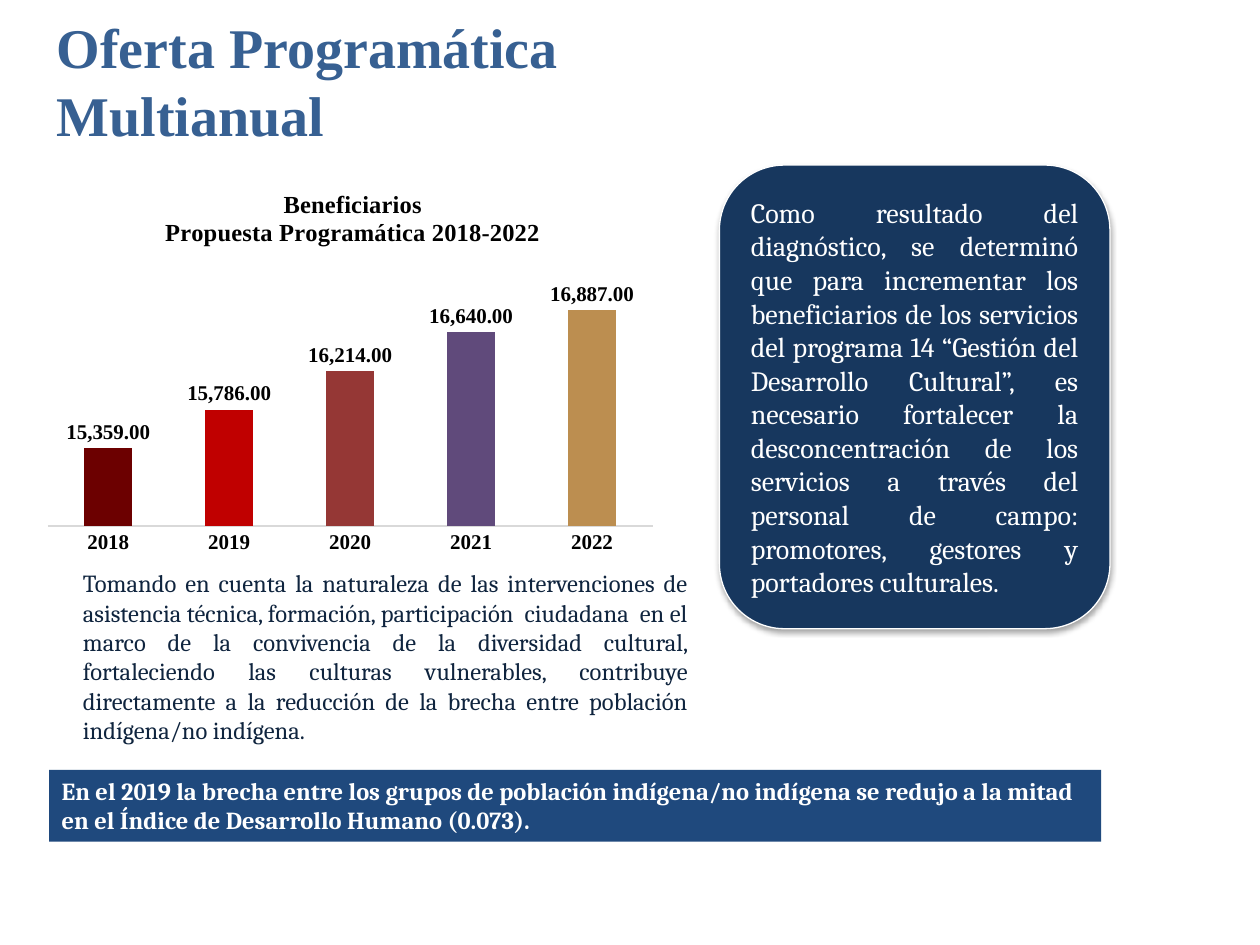
from lxml import etree
from pptx import Presentation
from pptx import util as u
from pptx.chart.data import CategoryChartData
from pptx.dml.color import RGBColor
from pptx.enum import chart as charts, shapes, text
from pptx.oxml import parse_xml
from pptx.oxml.ns import nsdecls, qn

COLORS = {
    "title": "376092", "navy": "17375E", "banner": "1F497D", "body": "0F243E",
    "white": "FFFFFF", "black": "000000", "axis": "D9D9D9",
}
BENEFICIARIES = {
    "2018": (15359, "6C0000"),
    "2019": (15786, "C00000"),
    "2020": (16214, "953735"),
    "2021": (16640, "604A7B"),
    "2022": (16887, "BC8E50"),
}
SERIF, BODY = "Times New Roman", "Cambria"


def rgb(name):
    return RGBColor.from_string(COLORS.get(name, name))


def box(left, top, width, height):
    return [u.Inches(length) for length in (left, top, width, height)]


def manual_layout(**fractions):
    modes = "".join(f'<c:{axis}Mode val="edge"/>' for axis in "xy")
    values = "".join(f'<c:{key} val="{value}"/>' for key, value in fractions.items())
    target = '<c:layoutTarget val="inner"/>' if "w" in fractions else ""
    return parse_xml(f'<c:layout {nsdecls("c")}><c:manualLayout>{target}{modes}{values}'
                     '</c:manualLayout></c:layout>')


class SlideBuilder:
    def __init__(self, slide):
        self.slide = slide

    def style(self, font, size, color, bold=False, name=SERIF):
        font.name, font.size, font.bold = name, u.Pt(size), bold
        font.color.rgb = rgb(color)

    def set_words(self, shape, words, align=text.PP_ALIGN.LEFT, anchor=text.MSO_ANCHOR.TOP,
                  **font_style):
        frame = shape.text_frame
        frame.text = words
        frame.word_wrap = True
        frame.auto_size = text.MSO_AUTO_SIZE.NONE
        frame.vertical_anchor = anchor
        paragraph = frame.paragraphs[0]
        paragraph.alignment = align
        for run in paragraph.runs:
            self.style(run.font, **font_style)

    def title(self, words, place):
        shape = self.slide.shapes.title
        shape.left, shape.top, shape.width, shape.height = box(*place)
        self.set_words(shape, words, anchor=text.MSO_ANCHOR.MIDDLE,
                       size=32, color="title", bold=True)
        # Raise the centred lines above the middle of the box
        shape.text_frame.margin_bottom = u.Inches(0.53)

    def text_box(self, words, place, **options):
        shape = self.slide.shapes.add_textbox(*box(*place))
        self.set_words(shape, words, name=BODY, **options)

    def panel(self, kind, words, place, fill, line=None, **options):
        shape = self.slide.shapes.add_shape(kind, *box(*place))
        shape.shadow.inherit = False
        shape.fill.solid()
        shape.fill.fore_color.rgb = rgb(fill)
        if line:
            shape.line.color.rgb = rgb(line)
            shape.line.width = u.Pt(0.75)
        else:
            shape.line.fill.background()
        self.set_words(shape, words, name=BODY, color="white", **options)
        return shape

    def drop_shadow(self, shape, blur, distance, opacity):
        effects = shape._element.spPr.find(qn("a:effectLst"))
        shadow = etree.SubElement(effects, qn("a:outerShdw"), blurRad=str(u.Pt(blur)),
                                  dist=str(u.Pt(distance)), dir="5400000", rotWithShape="0")
        color = etree.SubElement(shadow, qn("a:srgbClr"), val=COLORS["black"])
        etree.SubElement(color, qn("a:alpha"), val=str(opacity * 1000))

    def column_chart(self, title_lines, columns, place):
        data = CategoryChartData(number_format="#,##0.00")
        data.categories = list(columns)
        data.add_series("Series 1", [value for value, _ in columns.values()])
        chart = self.slide.shapes.add_chart(
            charts.XL_CHART_TYPE.COLUMN_CLUSTERED, *box(*place), data).chart
        self.style(chart.font, 10, "black")
        chart.has_legend = False

        # Chart title
        chart.has_title = True
        frame = chart.chart_title.text_frame
        frame.text = "\n".join(title_lines)
        for paragraph in frame.paragraphs:
            for run in paragraph.runs:
                self.style(run.font, 14, "black", bold=True)
        chart.chart_title.include_in_layout = False
        title_element = chart.chart_title._element
        for old in title_element.findall(qn("c:layout")):
            title_element.remove(old)
        title_element.find(qn("c:tx")).addnext(manual_layout(x=0.2, y=0.05))

        # Axes
        category_axis, value_axis = chart.category_axis, chart.value_axis
        category_axis.major_tick_mark = charts.XL_TICK_MARK.NONE
        category_axis.format.line.color.rgb = rgb("axis")
        category_axis.format.line.width = u.Pt(0.75)
        self.style(category_axis.tick_labels.font, 12, "black", bold=True)
        value_axis.visible = False
        value_axis.has_major_gridlines = False
        value_axis.minimum_scale, value_axis.maximum_scale = 14500, 17000

        # Columns and their labels
        plot = chart.plots[0]
        plot.gap_width = 150
        plot.vary_by_categories = False
        series = plot.series[0]
        series.format.fill.solid()
        series.format.fill.fore_color.rgb = rgb("4F81BD")
        for index, (_, color) in enumerate(columns.values()):
            fill = series.points[index].format.fill
            fill.solid()
            fill.fore_color.rgb = rgb(color)
        labels = series.data_labels
        labels.show_value = True
        labels.number_format, labels.number_format_is_linked = "#,##0.00", False
        labels.position = charts.XL_LABEL_POSITION.OUTSIDE_END
        self.style(labels.font, 12, "black", bold=True)

        # Plot area
        plot_area = chart._chartSpace.chart.plotArea
        for old in plot_area.findall(qn("c:layout")):
            plot_area.remove(old)
        plot_area.insert(0, manual_layout(x=0.02, y=0.34, w=0.96, h=0.57))


def main():
    presentation = Presentation()
    presentation.slide_width, presentation.slide_height = u.Inches(10), u.Inches(7.5)
    builder = SlideBuilder(presentation.slides.add_slide(presentation.slide_layouts[5]))

    # Heading
    builder.title("Oferta Programática Multianual", (0.35, 0.44, 5.21, 0.87))

    # Diagnosis panel
    panel = builder.panel(
        shapes.MSO_SHAPE.ROUNDED_RECTANGLE,
        "Como resultado del diagnóstico, se determinó que para incrementar los beneficiarios "
        "de los servicios del programa 14 “Gestión del Desarrollo Cultural”, es necesario "
        "fortalecer la desconcentración de los servicios a través del personal de campo: "
        "promotores, gestores y portadores culturales.",
        (5.71, 1.31, 3.1, 3.68), fill="navy", line="white", size=16,
        align=text.PP_ALIGN.JUSTIFY, anchor=text.MSO_ANCHOR.MIDDLE)
    builder.drop_shadow(panel, blur=3.1, distance=1.8, opacity=35)

    # Explanation below the chart
    builder.text_box(
        "Tomando en cuenta la naturaleza de las intervenciones de asistencia técnica, "
        "formación, participación  ciudadana  en el marco de la convivencia de la diversidad "
        "cultural, fortaleciendo las culturas vulnerables, contribuye directamente a la "
        "reducción de la brecha entre población indígena/no indígena.",
        (0.56, 4.46, 5, 1.51), size=14, color="body", align=text.PP_ALIGN.JUSTIFY)

    # Closing banner
    builder.panel(
        shapes.MSO_SHAPE.RECTANGLE,
        "En el 2019 la brecha entre los grupos de población indígena/no indígena se redujo "
        "a la mitad en el Índice de Desarrollo Humano (0.073).",
        (0.39, 6.11, 8.35, 0.57), fill="banner", size=14, bold=True)

    # Beneficiaries chart
    builder.column_chart(["Beneficiarios", "Propuesta Programática 2018-2022"],
                         BENEFICIARIES, (0.28, 1.31, 5, 3.15))

    presentation.save("out.pptx")


if __name__ == "__main__":
    main()
